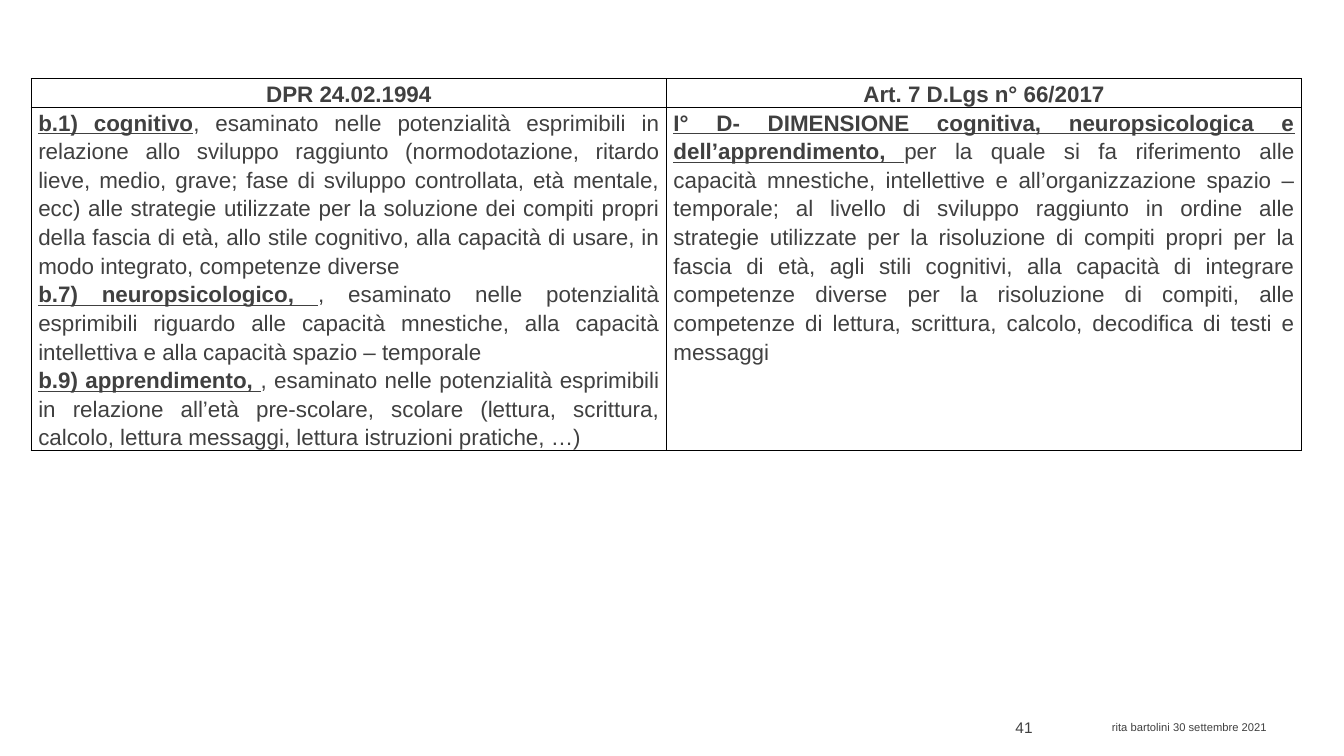
from lxml import etree
from pptx import Presentation
from pptx.dml.color import RGBColor
from pptx.enum.text import MSO_ANCHOR as Anchor, PP_ALIGN as Align
from pptx.oxml.ns import qn
from pptx.util import Inches, Pt

GREY = RGBColor(0x40, 0x40, 0x40)
BLACK = RGBColor(0, 0, 0)
FONT = "Arial"
GAP = " "  # em space, the wide gap after a heading's comma

HEADS = ["DPR 24.02.1994", "Art. 7 D.Lgs n° 66/2017"]
# One list per column: (underlined lead, running text)
BODIES = [
    [
        ("b.1) cognitivo",
         ", esaminato nelle potenzialità esprimibili in relazione allo sviluppo "
         "raggiunto (normodotazione, ritardo lieve, medio, grave; fase di sviluppo "
         "controllata, età mentale, ecc) alle strategie utilizzate per la soluzione "
         "dei compiti propri della fascia di età, allo stile cognitivo, alla capacità "
         "di usare, in modo integrato, competenze diverse"),
        ("b.7) neuropsicologico, ",
         f",{GAP}esaminato nelle potenzialità esprimibili riguardo alle capacità "
         "mnestiche, alla capacità intellettiva e alla capacità spazio – temporale"),
        ("b.9) apprendimento, ",
         f",{GAP}esaminato nelle potenzialità esprimibili in relazione all’età "
         "pre-scolare, scolare (lettura, scrittura, calcolo, lettura messaggi, "
         "lettura istruzioni pratiche, …)"),
    ],
    [
        ("I° D- DIMENSIONE cognitiva, neuropsicologica e dell’apprendimento, ",
         "per la quale si fa riferimento alle capacità mnestiche, intellettive e "
         "all’organizzazione spazio – temporale; al livello di sviluppo raggiunto in "
         "ordine alle strategie utilizzate per la risoluzione di compiti propri per la "
         "fascia di età, agli stili cognitivi, alla capacità di integrare competenze "
         "diverse per la risoluzione di compiti, alle competenze di lettura, "
         "scrittura, calcolo, decodifica di testi e messaggi"),
    ],
]
# Text, box, size, alignment, anchor
FOOTERS = [
    ("41", (9.42, 7.02, 0.92, 0.4), 11, Align.RIGHT, Anchor.MIDDLE),
    ("rita bartolini 30 settembre 2021", (10.93, 7.1, 2.4, 0.4), 8,
     Align.LEFT, Anchor.TOP),
]
COL_WIDTH = 6.3
ROW_HEIGHTS = [0.27, 3.3]


def add_run(para, text, size, bold=False, under=False):
    run = para.add_run()
    run.text = text
    font = run.font
    font.name, font.size = FONT, Pt(size)
    font.bold, font.underline = bold, under
    font.color.rgb = GREY


def add_border(cell):
    props = cell._tc.get_or_add_tcPr()
    for index, side in enumerate(("lnL", "lnR", "lnT", "lnB")):
        line = etree.Element(qn(f"a:{side}"), w=str(Pt(1)))
        fill = etree.SubElement(line, qn("a:solidFill"))
        etree.SubElement(fill, qn("a:srgbClr"), val=str(BLACK))
        props.insert(index, line)


def fill_cell(cell, paras, align):
    """Write paragraphs, each a list of (text, bold, underline) runs."""
    cell.fill.background()
    cell.margin_left = cell.margin_right = Inches(0.07)
    cell.margin_top = cell.margin_bottom = 0
    add_border(cell)
    frame = cell.text_frame
    for index, runs in enumerate(paras):
        para = frame.add_paragraph() if index else frame.paragraphs[0]
        para.alignment, para.line_spacing = align, 1.15
        for text, bold, under in runs:
            add_run(para, text, 16, bold, under)


def add_table(slide):
    frame = slide.shapes.add_table(
        len(ROW_HEIGHTS), len(HEADS), Inches(0.31), Inches(0.78),
        Inches(COL_WIDTH * len(HEADS)), Inches(sum(ROW_HEIGHTS)))
    table = frame.table
    table.first_row = table.horz_banding = False
    for row, height in zip(table.rows, ROW_HEIGHTS):
        row.height = Inches(height)
    for col, (head, body) in enumerate(zip(HEADS, BODIES)):
        table.columns[col].width = Inches(COL_WIDTH)
        fill_cell(table.cell(0, col), [[(head, True, False)]], Align.CENTER)
        paras = [[(lead, True, True), (text, False, False)] for lead, text in body]
        fill_cell(table.cell(1, col), paras, Align.JUSTIFY)


def add_footer(slide, text, box, size, align, anchor):
    frame = slide.shapes.add_textbox(*map(Inches, box)).text_frame
    frame.word_wrap = True
    frame.vertical_anchor = anchor
    para = frame.paragraphs[0]
    para.alignment = align
    add_run(para, text, size)


def main():
    deck = Presentation()
    deck.slide_width, deck.slide_height = Inches(13.33), Inches(7.5)
    slide = deck.slides.add_slide(deck.slide_layouts[6])
    add_table(slide)
    for footer in FOOTERS:
        add_footer(slide, *footer)
    deck.save("out.pptx")


if __name__ == "__main__":
    main()
